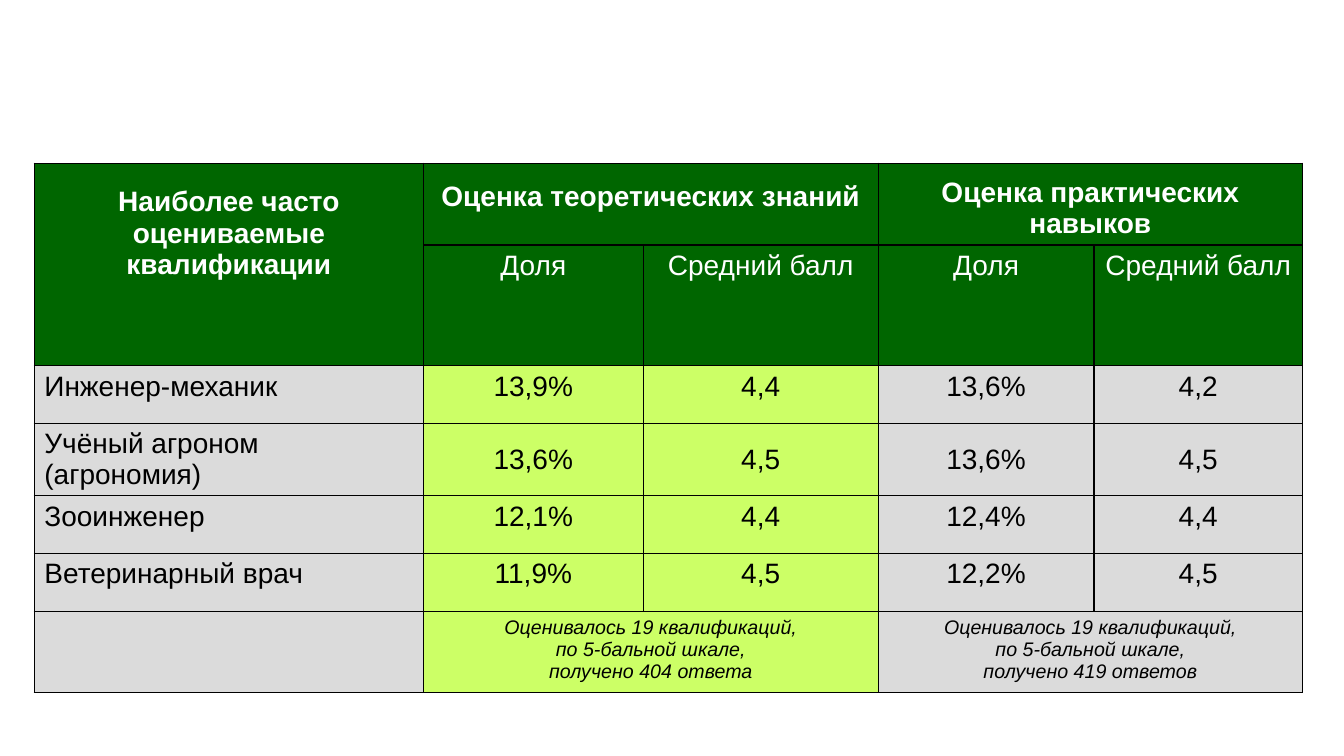
from dataclasses import dataclass

from lxml import etree
from pptx import Presentation
from pptx.dml.color import RGBColor
from pptx.enum.text import MSO_ANCHOR, PP_ALIGN
from pptx.oxml.ns import qn
from pptx.util import Inches, Pt

LEFT, CENTER = PP_ALIGN.LEFT, PP_ALIGN.CENTER
TOP = MSO_ANCHOR.TOP


@dataclass(frozen=True)
class Theme:
    font: str = "Arial"
    header: str = "006600"
    theory: str = "CCFF66"
    neutral: str = "DBDBDB"
    light: str = "FFFFFF"
    dark: str = "000000"
    body_size: int = 20
    note_size: int = 14
    border_width: int = 1


THEME = Theme()

COLUMN_WIDTHS = [3.86, 2.18, 2.33, 2.14, 2.07]
ROW_HEIGHTS = [0.81, 1.2, 0.57, 0.72, 0.57, 0.58, 0.8]
SUBHEADERS = ["Доля", "Средний балл"] * 2
RATINGS = [
    ("Инженер-механик", "13,9%", "4,4", "13,6%", "4,2"),
    ("Учёный агроном (агрономия)", "13,6%", "4,5", "13,6%", "4,5"),
    ("Зооинженер", "12,1%", "4,4", "12,4%", "4,4"),
    ("Ветеринарный врач", "11,9%", "4,5", "12,2%", "4,5"),
]
TWO_LINE_ROW = 1
NOTE = "Оценивалось 19 квалификаций,\nпо 5-бальной шкале,\nполучено {}"


def write_text(frame, text, size=THEME.body_size, color=THEME.dark,
               bold=False, italic=False, align=CENTER):
    """Fill a text frame, one paragraph per line of text."""
    frame.text = text
    for paragraph in frame.paragraphs:
        paragraph.alignment = align
        font = paragraph.font
        for run in paragraph.runs:
            font = run.font
        font.name, font.size = THEME.font, Pt(size)
        font.bold, font.italic = bold, italic
        font.color.rgb = RGBColor.from_string(color)


class SlideBuilder:
    def __init__(self, slide, theme):
        self.slide = slide
        self.theme = theme

    def table(self, left, top, widths, heights):
        shape = self.slide.shapes.add_table(
            len(heights), len(widths), Inches(left), Inches(top),
            Inches(sum(widths)), Inches(sum(heights)))
        table = shape.table
        for column, width in zip(table.columns, widths):
            column.width = Inches(width)
        for row, height in zip(table.rows, heights):
            row.height = Inches(height)
        for cell in table.iter_cells():
            self.border(cell)
        return table

    def border(self, cell):
        properties = cell._tc.get_or_add_tcPr()
        for side in ("a:lnL", "a:lnR", "a:lnT", "a:lnB"):
            line = etree.SubElement(properties, qn(side),
                                    w=str(Pt(self.theme.border_width)))
            fill = etree.SubElement(line, qn("a:solidFill"))
            etree.SubElement(fill, qn("a:srgbClr"), val=self.theme.dark)

    def cell(self, table, row, column, text, fill, span=(1, 1),
             margin_top=0.05, **text_format):
        cell = table.cell(row, column)
        rows, columns = span
        if span != (1, 1):
            cell.merge(table.cell(row + rows - 1, column + columns - 1))
        cell.fill.solid()
        cell.fill.fore_color.rgb = RGBColor.from_string(fill)
        cell.vertical_anchor = TOP
        cell.margin_top, cell.margin_bottom = Inches(margin_top), Inches(0.03)
        write_text(cell.text_frame, text, **text_format)


def main():
    presentation = Presentation()
    presentation.slide_width = Inches(13.33)
    presentation.slide_height = Inches(7.5)
    slide = presentation.slides.add_slide(presentation.slide_layouts[6])
    builder = SlideBuilder(slide, THEME)
    table = builder.table(0.34, 1.62, COLUMN_WIDTHS, ROW_HEIGHTS)

    # Header rows
    headings = [
        (0, "Наиболее часто оцениваемые квалификации", (2, 1), 0.23),
        (1, "Оценка теоретических знаний", (1, 2), 0.18),
        (3, "Оценка практических навыков", (1, 2), 0.14),
    ]
    for column, text, span, margin_top in headings:
        builder.cell(table, 0, column, text, THEME.header, span, margin_top,
                     color=THEME.light, bold=True)
    for column, text in enumerate(SUBHEADERS, start=1):
        builder.cell(table, 1, column, text, THEME.header, color=THEME.light)

    # Ratings by qualification
    fills = [THEME.neutral] + [THEME.theory] * 2 + [THEME.neutral] * 2
    for index, rating in enumerate(RATINGS):
        for column, (text, fill) in enumerate(zip(rating, fills)):
            lowered = index == TWO_LINE_ROW and column > 0
            builder.cell(table, index + 2, column, text, fill,
                         margin_top=0.21 if lowered else 0.05,
                         align=CENTER if column else LEFT)

    # Survey notes
    last_row = len(ROW_HEIGHTS) - 1
    builder.cell(table, last_row, 0, "", THEME.neutral)
    for column, answers in ((1, "404 ответа"), (3, "419 ответов")):
        builder.cell(table, last_row, column, NOTE.format(answers),
                     fills[column], (1, 2), size=THEME.note_size, italic=True)

    presentation.save("out.pptx")


if __name__ == "__main__":
    main()
